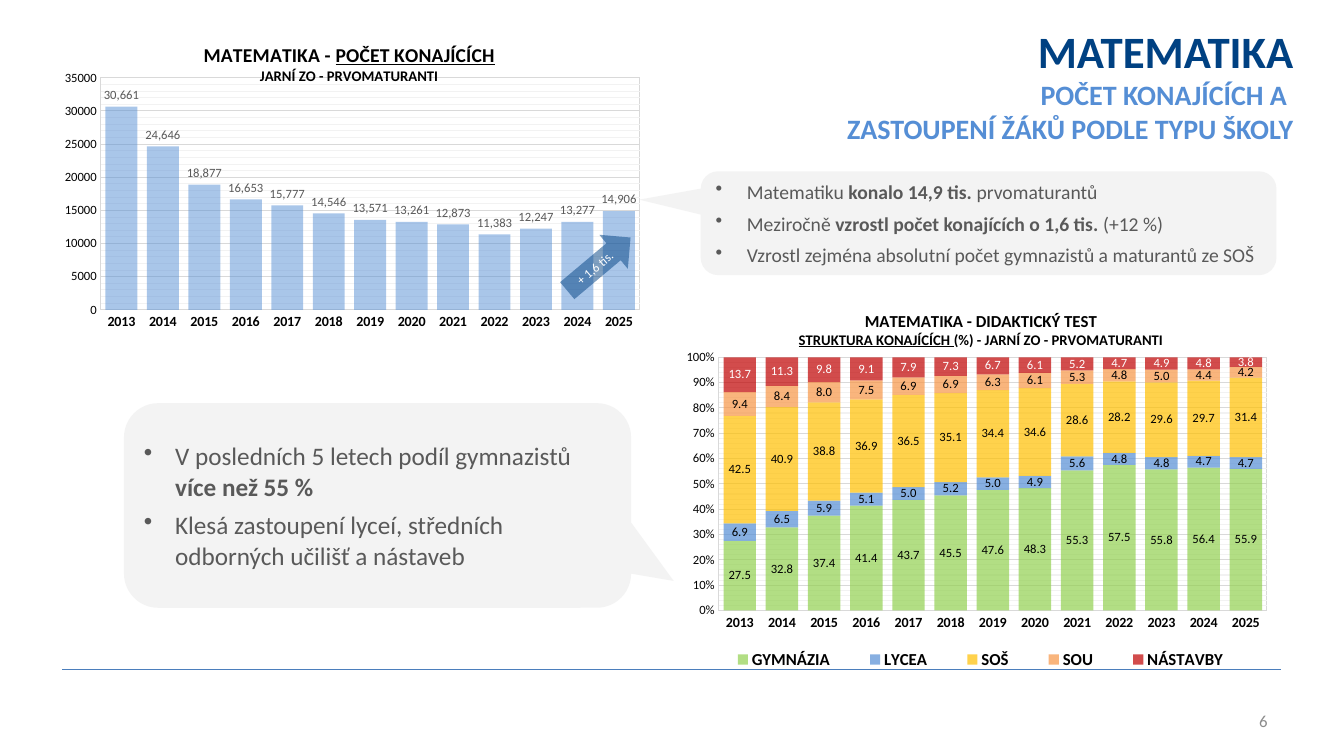
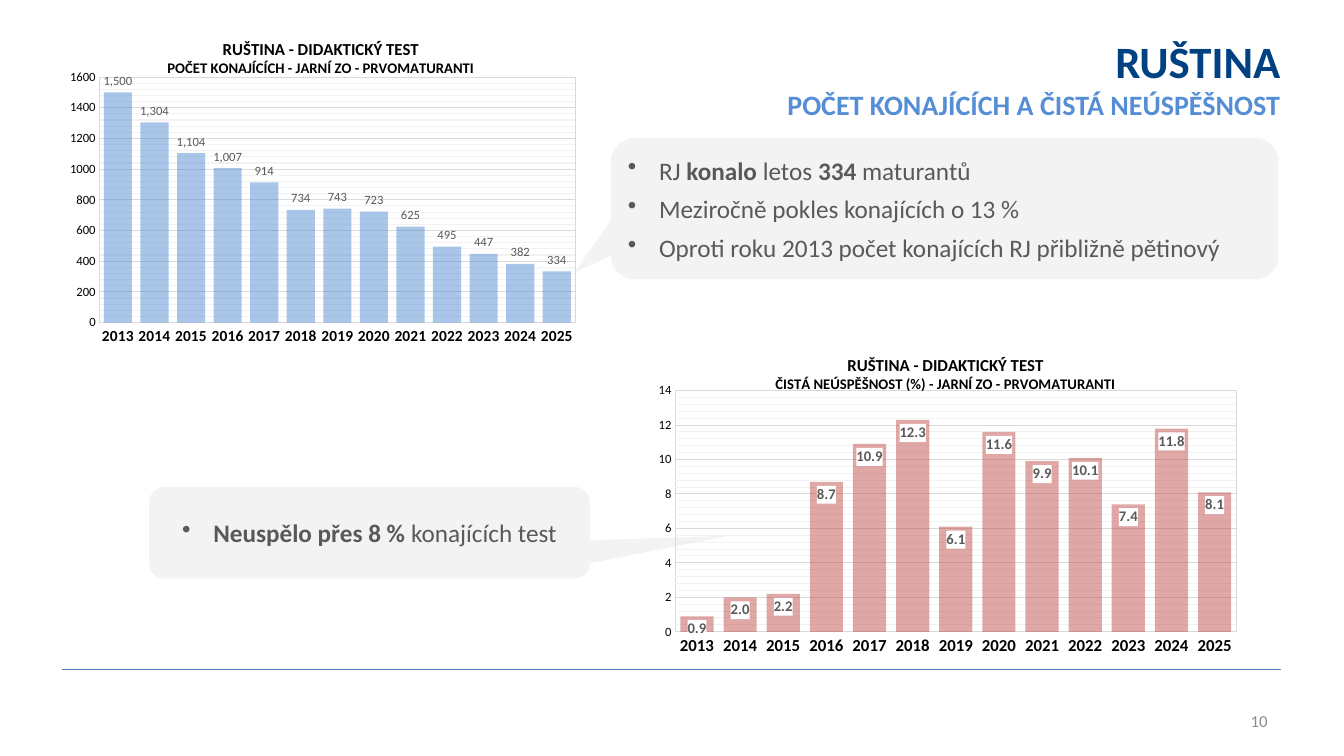
from dataclasses import dataclass

from lxml import etree
from pptx import Presentation
from pptx import oxml
from pptx.chart import data as chart_data
from pptx.dml.color import RGBColor
from pptx.enum import chart as ch, shapes, text
from pptx.oxml import ns
from pptx.util import Inches, Pt


@dataclass(frozen=True)
class Theme:
    font: str = "Calibri"
    # Colours
    navy: str = "004182"
    blue: str = "558ED5"
    rule: str = "4B7EBC"
    gray: str = "595959"
    number: str = "8C8C8C"
    bubble: str = "D9D9D9"
    grid: str = "D9D9D9"
    minor_grid: str = "F2F2F2"
    black: str = "000000"
    white: str = "FFFFFF"
    red: str = "C0504D"
    school_types: tuple = ("92D050", "558ED5", "FFC000", "F79646", "C00000")
    # Type sizes
    title: float = 32
    subtitle: float = 20
    body: float = 18
    body_small: float = 14
    legend: float = 12
    footer: float = 12
    chart_heading: float = 12
    chart_subheading: float = 10.5
    chart_text: float = 10
    label: float = 9


THEME = Theme()
YEARS = [str(year) for year in range(2013, 2026)]


def rgb(value):
    return RGBColor.from_string(value)


def set_alpha(element, percent):
    """Make the first solid colour inside the element translucent."""
    color = element.find(".//" + ns.qn("a:srgbClr"))
    etree.SubElement(color, ns.qn("a:alpha")).set("val", str(percent * 1000))


def outline(color):
    """Chart part properties: no fill and a thin line."""
    return oxml.parse_xml(
        f'<c:spPr {ns.nsdecls("c", "a")}><a:noFill/><a:ln w="9525">'
        f'<a:solidFill><a:srgbClr val="{color}"/></a:solidFill>'
        '</a:ln></c:spPr>')


def set_layout(element, index, inner=False, **fractions):
    """Give a chart part a manual layout in fractions of the chart."""
    old = element.find(ns.qn("c:layout"))
    if old is not None:
        element.remove(old)
    layout = etree.Element(ns.qn("c:layout"))
    manual = etree.SubElement(layout, ns.qn("c:manualLayout"))
    values = {"layoutTarget": "inner"} if inner else {}
    values.update(xMode="edge", yMode="edge", **fractions)
    for name, value in values.items():
        etree.SubElement(manual, ns.qn("c:" + name)).set("val", str(value))
    element.insert(index, layout)


def add_marked_runs(p, marked, emphasis):
    """Add runs; parts between asterisks get the named font attribute."""
    for i, part in enumerate(marked.split("*")):
        if part:
            r = p.add_run()
            r.text = part
            if i % 2:
                setattr(r.font, emphasis, True)


class Deck:
    def __init__(self, theme):
        self.t = theme
        self.prs = Presentation()
        self.prs.slide_width, self.prs.slide_height = Inches(13.33), Inches(7.5)
        self.s = None

    def style(self, font, size, color, bold=False):
        font.name, font.size, font.bold = self.t.font, Pt(size), bold
        font.color.rgb = rgb(color)

    def add_slide(self, number):
        """Start a slide with the shared rule and page number."""
        self.s = self.prs.slides.add_slide(self.prs.slide_layouts[5])
        line = self.s.shapes.add_connector(
            shapes.MSO_CONNECTOR.STRAIGHT,
            Inches(0.62), Inches(6.64), Inches(12.71), Inches(6.64))
        line.line.color.rgb, line.line.width = rgb(self.t.rule), Pt(0.75)
        etree.SubElement(line.element.spPr, ns.qn("a:effectLst"))
        box = self.s.shapes.add_textbox(*map(Inches, (9.56, 6.95, 3.11, 0.4)))
        tf = box.text_frame
        tf.word_wrap, tf.vertical_anchor = True, text.MSO_ANCHOR.MIDDLE
        p = tf.paragraphs[0]
        p.text, p.alignment = str(number), text.PP_ALIGN.RIGHT
        self.style(p.font, self.t.footer, self.t.number)

    def title(self, at, heading, subheading):
        sp = self.s.shapes.title
        sp.left, sp.top, sp.width, sp.height = map(Inches, at)
        tf = sp.text_frame
        tf.vertical_anchor = text.MSO_ANCHOR.MIDDLE
        p = tf.paragraphs[0]
        p.alignment = text.PP_ALIGN.RIGHT
        parts = [(heading, self.t.title, self.t.navy)]
        parts += [(line, self.t.subtitle, self.t.blue)
                  for line in subheading.split("\n")]
        for i, (words, size, color) in enumerate(parts):
            if i:
                p.add_line_break()
            r = p.add_run()
            r.text = words
            self.style(r.font, size, color, True)

    def shape(self, kind, at, color, alpha):
        sp = self.s.shapes.add_shape(kind, *map(Inches, at))
        sp.shadow.inherit = False
        sp.fill.solid()
        sp.fill.fore_color.rgb = rgb(color)
        set_alpha(sp.element.spPr, alpha)
        sp.line.fill.background()
        sp.text_frame.vertical_anchor = text.MSO_ANCHOR.MIDDLE
        return sp

    def callout(self, at, tip, bullets, size=None, align=text.PP_ALIGN.LEFT):
        sp = self.shape(shapes.MSO_SHAPE.ROUNDED_RECTANGULAR_CALLOUT, at,
                        self.t.bubble, 30)
        for i, value in enumerate((*tip, 0.167)):
            sp.adjustments[i] = value
        tf = sp.text_frame
        for i, bullet in enumerate(bullets):
            p = tf.add_paragraph() if i else tf.paragraphs[0]
            p.alignment, p.space_before = align, Pt(6)
            self.style(p.font, size or self.t.body, self.t.gray)
            add_marked_runs(p, bullet, "bold")
            pPr = p._p.get_or_add_pPr()
            pPr.set("marL", str(Inches(0.31)))
            pPr.set("indent", str(-Inches(0.31)))
            mark = oxml.parse_xml(
                f'<a:buChar {ns.nsdecls("a")} char="•"/>')
            pPr.find(ns.qn("a:defRPr")).addprevious(mark)

    def growth_arrow(self, at, rotation, label):
        sp = self.shape(shapes.MSO_SHAPE.RIGHT_ARROW, at, self.t.navy, 50)
        sp.rotation = rotation
        sp.text_frame.word_wrap = False
        p = sp.text_frame.paragraphs[0]
        p.text, p.alignment = label, text.PP_ALIGN.CENTER
        self.style(p.font, self.t.label, self.t.white)

    def chart(self, at, heading, title_x, plot, series, colors, alpha,
              number_format, heading_size=None, year_size=None, scale=None,
              stacked=False):
        """Add a column chart; series is a list of (name, values)."""
        data = chart_data.CategoryChartData()
        data.categories = YEARS
        for name, values in series:
            data.add_series(name, values)
        kinds = ch.XL_CHART_TYPE
        kind = kinds.COLUMN_STACKED_100 if stacked else kinds.COLUMN_CLUSTERED
        chart = self.s.shapes.add_chart(kind, *map(Inches, at), data).chart
        chart.has_legend = False
        self.style(chart.font, self.t.chart_text, self.t.black)

        # Heading of two lines
        tf = chart.chart_title.text_frame
        sizes = (heading_size or self.t.chart_heading, self.t.chart_subheading)
        for i, (line, size) in enumerate(zip(heading, sizes)):
            p = tf.add_paragraph() if i else tf.paragraphs[0]
            self.style(p.font, size, self.t.black, True)
            add_marked_runs(p, line, "underline")
        set_layout(chart.chart_title._element, 1, x=title_x,
                   y=round(0.17 / at[3], 3))

        # Plot area
        area = chart.element.find(".//" + ns.qn("c:plotArea"))
        set_layout(area, 0, inner=True, **dict(zip("xywh", plot)))
        area.append(outline(self.t.grid))
        bars = chart.plots[0]
        bars.gap_width, bars.vary_by_categories = 30, False
        if stacked:
            bars.overlap = 100

        # Axes
        years, values = chart.category_axis, chart.value_axis
        for axis in (years, values):
            axis.major_tick_mark = axis.minor_tick_mark = ch.XL_TICK_MARK.NONE
        self.style(years.tick_labels.font, year_size or self.t.chart_text,
                   self.t.black, True)
        self.style(values.tick_labels.font, self.t.label, self.t.black)
        values.tick_labels.number_format = "0%" if stacked else "0"
        values.tick_labels.number_format_is_linked = False
        values.format.line.fill.background()
        values.has_major_gridlines = values.has_minor_gridlines = True
        for line in (years.format.line, values.major_gridlines.format.line):
            line.color.rgb, line.width = rgb(self.t.grid), Pt(0.75)
        minor = values._element.find(ns.qn("c:minorGridlines"))
        minor.append(outline(self.t.minor_grid))
        if scale:
            values.minimum_scale = 0
            values.maximum_scale, values.major_unit = scale
            values.minor_unit = values.major_unit / 5

        # Series and their labels
        place = ch.XL_LABEL_POSITION
        for ser, color in zip(bars.series, colors):
            ser.format.fill.solid()
            ser.format.fill.fore_color.rgb = rgb(color)
            set_alpha(ser._element.spPr, alpha)
            labels = ser.data_labels
            labels.show_value = True
            labels.number_format = number_format
            labels.number_format_is_linked = False
            labels.position = place.CENTER if stacked else place.OUTSIDE_END
            label_color = self.t.black if stacked else self.t.gray
            self.style(labels.font, self.t.label, label_color)
        return chart

    def boxed_labels(self, labels):
        """Put bold labels on white inside the bar ends."""
        labels.position = ch.XL_LABEL_POSITION.INSIDE_END
        self.style(labels.font, self.t.chart_subheading, self.t.gray, True)
        labels._element.find(ns.qn("c:numFmt")).addnext(oxml.parse_xml(
            f'<c:spPr {ns.nsdecls("c", "a")}><a:solidFill>'
            f'<a:srgbClr val="{self.t.white}"/></a:solidFill></c:spPr>'))

    def legend(self, chart, **layout):
        chart.has_legend = True
        chart.legend.position = ch.XL_LEGEND_POSITION.BOTTOM
        chart.legend.include_in_layout = False
        self.style(chart.legend.font, self.t.legend, self.t.black, True)
        set_layout(chart.legend._element, 1, **layout)


def mathematics(deck):
    t = deck.t
    deck.add_slide(6)
    deck.chart(
        (0.4, 0.21, 6.11, 3.29),
        ("MATEMATIKA - *POČET KONAJÍCÍCH*", "JARNÍ ZO - PRVOMATURANTI"),
        0.26, (0.098, 0.171, 0.875, 0.7),
        [("Počet", (30661, 24646, 18877, 16653, 15777, 14546, 13571, 13261,
                    12873, 11383, 12247, 13277, 14906))],
        [t.blue], 50, "#,##0", heading_size=14, scale=(35000, 5000))
    deck.title((6.95, 0.21, 5.98, 1.25), "MATEMATIKA",
               "POČET KONAJÍCÍCH A \nZASTOUPENÍ ŽÁKŮ PODLE TYPU ŠKOLY")
    deck.callout((6.95, 1.7, 5.71, 1.03), (-0.607, -0.227), (
        "Matematiku *konalo 14,9 tis. *prvomaturantů",
        "Meziročně *vzrostl počet konajících o 1,6 tis. *(+12 %)",
        "Vzrostl zejména absolutní počet gymnazistů a maturantů ze SOŠ",
    ), size=t.body_small)
    deck.growth_arrow((5.53, 2.4, 0.82, 0.44), 320, "+ 1,6 tis.")
    structure = deck.chart(
        (6.67, 2.87, 6.11, 3.95),
        ("MATEMATIKA - DIDAKTICKÝ TEST",
         "*STRUKTURA KONAJÍCÍCH *(%) - JARNÍ ZO - PRVOMATURANTI"),
        0.2, (0.075, 0.171, 0.89, 0.636),
        [("GYMNÁZIA", (27.5, 32.8, 37.4, 41.4, 43.7, 45.5, 47.6, 48.3, 55.3,
                       57.5, 55.8, 56.4, 55.9)),
         ("LYCEA", (6.9, 6.5, 5.9, 5.1, 5.0, 5.2, 5.0, 4.9, 5.6, 4.8, 4.8,
                    4.7, 4.7)),
         ("SOŠ", (42.5, 40.9, 38.8, 36.9, 36.5, 35.1, 34.4, 34.6, 28.6, 28.2,
                  29.6, 29.7, 31.4)),
         ("SOU", (9.4, 8.4, 8.0, 7.5, 6.9, 6.9, 6.3, 6.1, 5.3, 4.8, 5.0, 4.4,
                  4.2)),
         ("NÁSTAVBY", (13.7, 11.3, 9.8, 9.1, 7.9, 7.3, 6.7, 6.1, 5.2, 4.7,
                       4.9, 4.8, 3.8))],
        t.school_types, 70, "0.0", stacked=True)
    top_labels = structure.plots[0].series[-1].data_labels
    top_labels.font.color.rgb = rgb(t.white)
    deck.legend(structure, x=0.05, y=0.89, w=0.9, h=0.08)
    deck.callout((1.23, 4, 5.03, 2.03), (0.584, 0.369), (
        "V posledních 5 letech podíl gymnazistů *více než 55 %*",
        "Klesá zastoupení lyceí, středních odborných učilišť a nástaveb"))


def russian(deck):
    t = deck.t
    deck.add_slide(10)
    deck.chart(
        (0.46, 0.17, 5.39, 3.48),
        ("RUŠTINA - DIDAKTICKÝ TEST",
         "POČET KONAJÍCÍCH - JARNÍ ZO - PRVOMATURANTI"),
        0.217, (0.098, 0.171, 0.875, 0.7),
        [("Počet", (1500, 1304, 1104, 1007, 914, 734, 743, 723, 625, 495, 447,
                    382, 334))],
        [t.blue], 50, "#,##0", year_size=11, scale=(1600, 200))
    deck.callout((6.06, 1.37, 6.62, 1.4), (-0.555, 0.453), (
        "RJ *konalo* letos *334 *maturantů",
        "Meziročně pokles konajících o 13 %",
        "Oproti roku 2013 počet konajících RJ přibližně pětinový"))
    failure = deck.chart(
        (6.23, 3.31, 6.25, 3.31),
        ("RUŠTINA - DIDAKTICKÝ TEST",
         "ČISTÁ NEÚSPĚŠNOST (%) - JARNÍ ZO - PRVOMATURANTI"),
        0.229, (0.075, 0.171, 0.89, 0.723),
        [("Neúspěšnost", (0.9, 2.0, 2.2, 8.7, 10.9, 12.3, 6.1, 11.6, 9.9,
                          10.1, 7.4, 11.8, 8.1))],
        [t.red], 50, "0.0", year_size=12, scale=(14, 2))
    deck.boxed_labels(failure.plots[0].series[0].data_labels)
    deck.callout((1.48, 4.83, 4.37, 0.91), (0.814, 0.033),
                 ("*Neuspělo přes 8 % *konajících test",),
                 align=text.PP_ALIGN.CENTER)
    deck.title((6.63, 0.17, 6.17, 1.19), "RUŠTINA",
               "POČET KONAJÍCÍCH A ČISTÁ NEÚSPĚŠNOST")


def main():
    deck = Deck(THEME)
    mathematics(deck)
    russian(deck)
    deck.prs.save("out.pptx")


if __name__ == "__main__":
    main()
